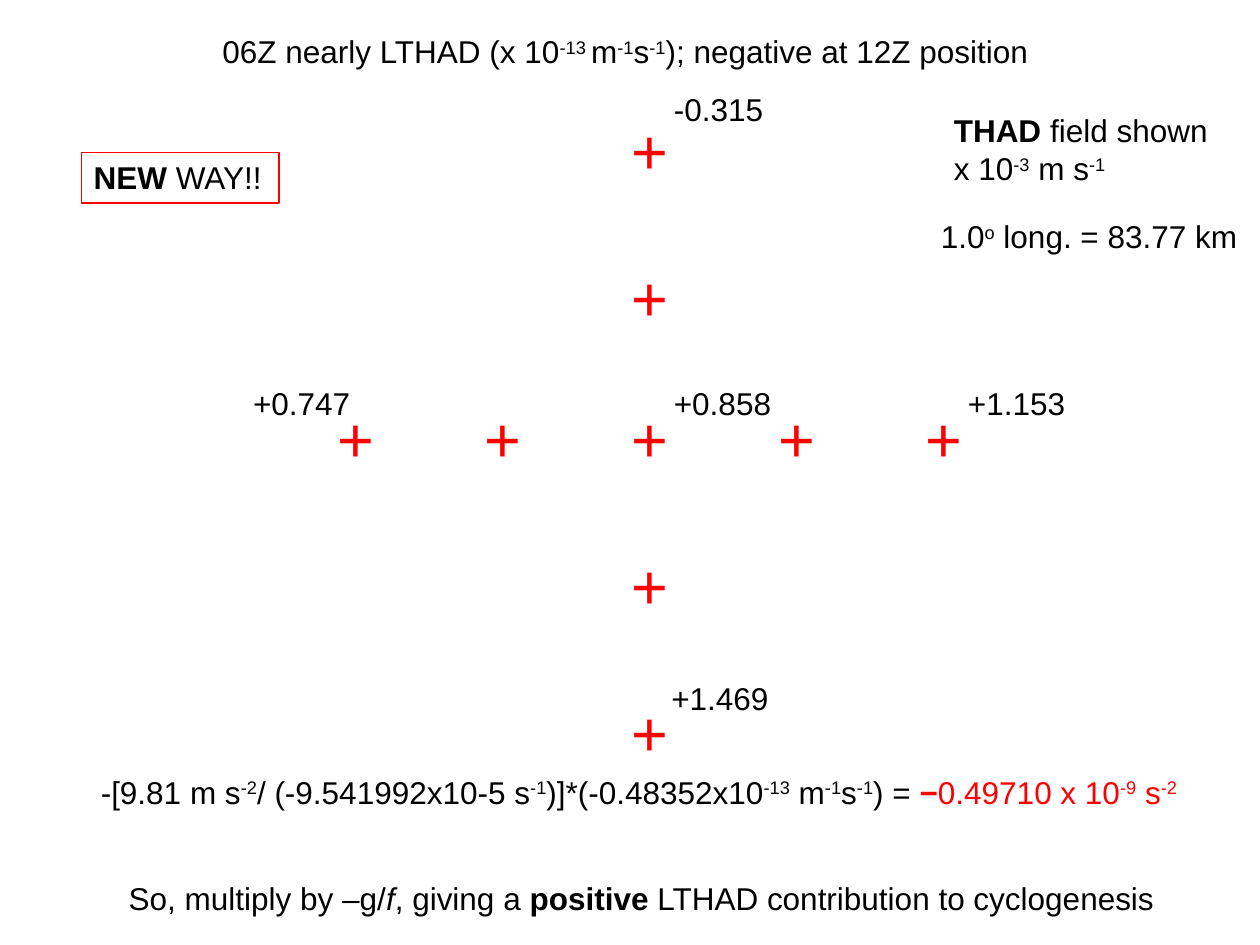
"""Build the LTHAD slide: a cross of grid points, their values and the sums."""
from dataclasses import dataclass
from typing import Optional

from lxml.etree import SubElement as Sub
from pptx import Presentation as Deck
from pptx.dml.color import RGBColor as Rgb
from pptx.enum.text import MSO_AUTO_SIZE as Fit
from pptx.oxml.ns import qn
from pptx.util import Pt


@dataclass(frozen=True)
class Theme:
    font: str = "Arial"
    body: int = 18
    mark: int = 36
    ink: Rgb = Rgb(0, 0, 0)
    red: Rgb = Rgb(255, 0, 0)
    paper: Rgb = Rgb(255, 255, 255)
    edge: float = 0.75
    veil: int = 85


@dataclass(frozen=True)
class Bit:
    text: str
    sup: bool = False
    bold: bool = False
    slant: bool = False
    hue: Optional[Rgb] = None


@dataclass(frozen=True)
class Box:
    left: float
    top: float
    width: float
    lines: list[list[Bit]]
    height: float = 29
    size: int = Theme.body
    ink: Rgb = Theme.ink
    fill: bool = True
    veil: bool = False
    edge: bool = False
    wrap: bool = False


def sup(text: str, hue: Optional[Rgb] = None) -> Bit:
    """Return a raised run."""
    return Bit(text, sup=True, hue=hue)


def bold(text: str, hue: Optional[Rgb] = None) -> Bit:
    """Return a bold run."""
    return Bit(text, bold=True, hue=hue)


def label(left: float, top: float, width: float, text: str, wrap: bool = False) -> Box:
    """Return a value label on a slightly clear ground."""
    return Box(left, top, width, [[Bit(text)]], veil=True, wrap=wrap)


def cross(left: float, top: float) -> Box:
    """Return a red plus that marks a grid point."""
    return Box(left, top, 30, [[Bit("+")]], height=51, size=THEME.mark,
               ink=THEME.red, fill=False, wrap=True)


def write(para, bits: list[Bit], box: Box) -> None:
    """Fill one paragraph with its runs."""
    para.font.name = THEME.font
    para.font.size = Pt(box.size)
    para.font.color.rgb = box.ink
    for bit in bits:
        run = para.add_run()
        run.text = bit.text
        if bit.bold:
            run.font.bold = True
        if bit.slant:
            run.font.italic = True
        if bit.hue is not None:
            run.font.color.rgb = bit.hue
        if bit.sup:
            run.font._element.set("baseline", "30000")


def draw(shapes, box: Box) -> None:
    """Add one text box to the slide."""
    shape = shapes.add_textbox(Pt(box.left), Pt(box.top), Pt(box.width), Pt(box.height))
    if box.fill:
        shape.fill.solid()
        shape.fill.fore_color.rgb = THEME.paper
    if box.veil:
        tone = shape._element.spPr.find(f"{qn('a:solidFill')}/{qn('a:srgbClr')}")
        Sub(tone, qn("a:alpha"), val=str(THEME.veil * 1000))
    if box.edge:
        shape.line.color.rgb = THEME.red
        shape.line.width = Pt(THEME.edge)
    frame = shape.text_frame
    frame.word_wrap = box.wrap
    frame.auto_size = Fit.SHAPE_TO_FIT_TEXT
    for index, bits in enumerate(box.lines):
        write(frame.add_paragraph() if index else frame.paragraphs[0], bits, box)


THEME = Theme()
STEP, MID_X, MID_Y = 84, 354, 225
ROWS = (60, 144, 309, 393)

TITLE = Box(120, 15, 485, [[
    Bit("06Z nearly LTHAD (x 10"), sup("-13 "), Bit("m"), sup("-1"), Bit("s"),
    sup("-1"), Bit("); negative at 12Z position")]])
BADGE = Box(46.5, 87, 113, [[bold("NEW"), Bit(" WAY!!")]], edge=True)
FIELD = Box(538, 60, 160, [
    [bold("THAD"), Bit(" field shown")],
    [Bit("x 10"), sup("-3"), Bit(" m s"), sup("-1")]], height=50.5)
SCALE = Box(530.5, 120.5, 186.5, [[Bit("1.0"), sup("o"), Bit(" long. = 83.77 km")]])
SUM = Box(50.5, 438, 646.5, [[
    Bit("-[9.81 m s"), sup("-2"), Bit("/ (-9.541992x10-5 s"), sup("-1"),
    Bit(")]*(-0.48352x10"), sup("-13"), Bit(" m"), sup("-1"), Bit("s"), sup("-1"),
    Bit(") = "), bold("−", THEME.red), Bit("0.49710 x 10", hue=THEME.red),
    sup("-9", THEME.red), Bit(" s", hue=THEME.red), sup("-2", THEME.red)]], wrap=True)
CLOSE = Box(66.5, 499, 601, [[
    Bit("So, multiply by –g/"), Bit("f", slant=True), Bit(", giving a "),
    bold("positive"), Bit(" LTHAD contribution to cyclogenesis")]])
VALUES = [
    label(546, 216, 70.5, "+1.153"),
    label(137.5, 216, 70.5, "+0.747"),
    label(378, 216, 72, "+0.858", wrap=True),
    label(378, 48, 66, "-0.315"),
    label(376.5, 384.5, 70.5, "+1.469"),
]
MARKS = [cross(MID_X + STEP * col, MID_Y) for col in range(-2, 3)]
MARKS += [cross(MID_X, top) for top in ROWS]


def main() -> None:
    """Build and save the slide."""
    deck = Deck()
    deck.slide_width, deck.slide_height = Pt(720), Pt(540)
    slide = deck.slides.add_slide(deck.slide_layouts[6])
    for box in [CLOSE, BADGE, FIELD, SCALE, *VALUES, TITLE, *MARKS, SUM]:
        draw(slide.shapes, box)
    deck.save("out.pptx")


if __name__ == "__main__":
    main()
